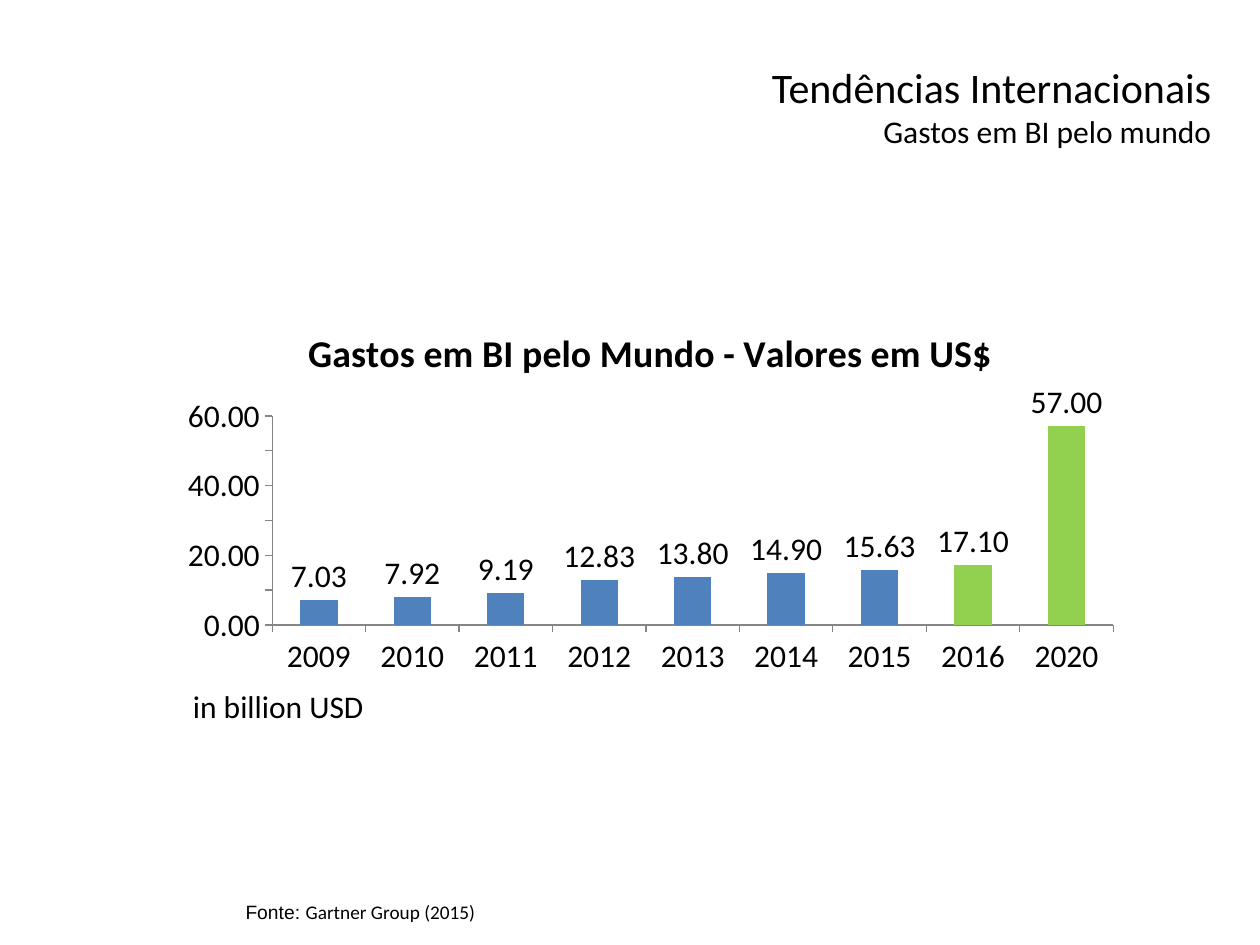
from pptx import Presentation
from pptx import util as u
from pptx.chart import data
from pptx.dml import color
from pptx.enum import chart as ch, text

BLACK = color.RGBColor(0, 0, 0)
BLUE = color.RGBColor(0x4F, 0x81, 0xBD)
GREEN = color.RGBColor(0x92, 0xD0, 0x50)
GRAY = color.RGBColor(0x86, 0x86, 0x86)

SPEND = {
    "2009": 7.03, "2010": 7.92, "2011": 9.19, "2012": 12.83, "2013": 13.8,
    "2014": 14.9, "2015": 15.63, "2016": 17.1, "2020": 57,
}
FORECAST = ("2016", "2020")


def style(obj, **values):
    for name, value in values.items():
        setattr(obj, name, value)


def set_font(font, size, name="Calibri", bold=False):
    style(font, size=u.Pt(size), name=name, bold=bold)
    font.color.rgb = BLACK


def paint(fill, shade):
    fill.solid()
    fill.fore_color.rgb = shade


def add_text(slide, box, lines, align=text.PP_ALIGN.LEFT, **frame):
    """Each line is a list of (wording, size, font name) runs."""
    tf = slide.shapes.add_textbox(*map(u.Cm, box)).text_frame
    style(tf, **{"word_wrap": True, **frame})
    for i, runs in enumerate(lines):
        para = tf.add_paragraph() if i else tf.paragraphs[0]
        para.alignment = align
        for words, size, name in runs:
            run = para.add_run()
            run.text = words
            set_font(run.font, size, name)


def add_bars(slide, box):
    info = data.CategoryChartData(number_format="0.00")
    info.categories = list(SPEND)
    info.add_series("Series 1", list(SPEND.values()))
    chart = slide.shapes.add_chart(
        ch.XL_CHART_TYPE.COLUMN_CLUSTERED, *map(u.Cm, box), info).chart
    set_font(chart.font, 18)
    chart.has_legend = False

    # Title
    title = chart.chart_title
    title.include_in_layout = False
    para = title.text_frame.paragraphs[0]
    run = para.add_run()
    run.text = "Gastos em BI pelo Mundo - Valores em US$"
    set_font(run.font, 21.6, bold=True)

    # Axes
    for axis in (chart.category_axis, chart.value_axis):
        style(axis, has_major_gridlines=False,
              major_tick_mark=ch.XL_TICK_MARK.OUTSIDE,
              minor_tick_mark=ch.XL_TICK_MARK.NONE)
        axis.format.line.color.rgb = GRAY
        axis.format.line.width = u.Pt(0.75)
    style(chart.value_axis, minimum_scale=0, maximum_scale=60, major_unit=10)
    style(chart.value_axis.tick_labels, number_format="0.00",
          number_format_is_linked=False)

    # Columns and value labels
    plot = chart.plots[0]
    style(plot, gap_width=150, vary_by_categories=False, has_data_labels=True)
    style(plot.data_labels, show_value=True, number_format="0.00",
          number_format_is_linked=False,
          position=ch.XL_LABEL_POSITION.OUTSIDE_END)
    bars = plot.series[0]
    bars.invert_if_negative = False
    paint(bars.format.fill, BLUE)
    for i, year in enumerate(SPEND):
        if year in FORECAST:
            paint(bars.points[i].format.fill, GREEN)


def main():
    prs = Presentation()
    style(prs, slide_width=u.Cm(25.4), slide_height=u.Cm(19.05))
    slide = prs.slides.add_slide(prs.slide_layouts[6])

    # Chart with its unit
    add_bars(slide, (3.4, 6.15, 19.43, 7.62))
    add_text(slide, (3.64, 13.72, 4.4, 1.02),
             [[("in billion USD", 18, "Calibri")]], word_wrap=False)

    # Source line
    add_text(slide, (4.7, 18.01, 19.61, 0.74),
             [[("Fonte: ", 11, "Arial"),
               ("Gartner Group (2015)", 11, "Calibri")]],
             vertical_anchor=text.MSO_ANCHOR.MIDDLE)

    # Heading
    add_text(slide, (9.91, 1.12, 14.76, 2.59),
             [[("Tendências Internacionais", 24, "Calibri")],
              [("Gastos em BI pelo mundo", 18, "Calibri")]],
             align=text.PP_ALIGN.RIGHT)

    prs.save("out.pptx")


if __name__ == "__main__":
    main()
